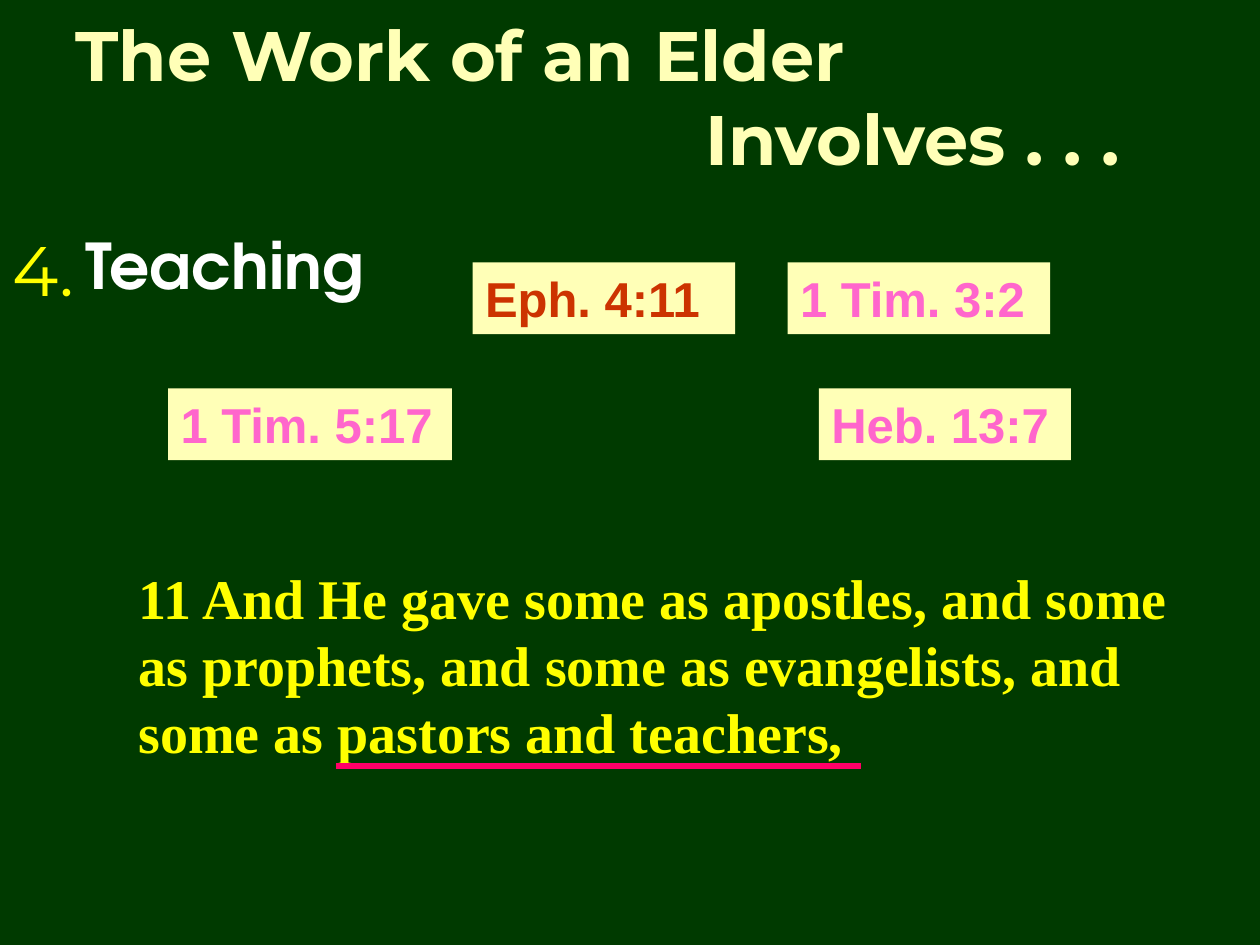
from dataclasses import dataclass

from lxml.etree import SubElement
from pptx import Presentation
from pptx.dml.color import RGBColor
from pptx.enum.shapes import MSO_CONNECTOR, MSO_SHAPE
from pptx.enum.text import MSO_ANCHOR, PP_ALIGN
from pptx.oxml.ns import qn
from pptx.util import Cm, Pt


@dataclass(frozen=True)
class TextStyle:
    font: str
    size: int
    color: str
    bold: bool = True


@dataclass(frozen=True)
class Theme:
    background: str = "003A00"
    label_fill: str = "FFFFB7"
    underline: str = "FF0066"
    underline_width: int = 3
    title: TextStyle = TextStyle("Montserrat", 40, "FFFFB7")
    number: TextStyle = TextStyle("Montserrat", 40, "FFFF00", False)
    topic: TextStyle = TextStyle("TeX Gyre Adventor", 36, "FFFFFF")
    current_reference: TextStyle = TextStyle("Arial", 28, "CC3300")
    other_reference: TextStyle = TextStyle("Arial", 28, "FF66CC")
    verse: TextStyle = TextStyle("Times New Roman", 32, "FFFF00")


@dataclass(frozen=True)
class Box:
    left: float
    top: float
    width: float
    height: float

    def lengths(self) -> tuple:
        return Cm(self.left), Cm(self.top), Cm(self.width), Cm(self.height)


@dataclass(frozen=True)
class Reference:
    text: str
    box: Box
    style: TextStyle


THEME = Theme()
LABEL_HEIGHT = 1.45
FIRST_ROW, SECOND_ROW = 5.29, 7.83
REFERENCES = (
    Reference("Eph. 4:11", Box(9.53, FIRST_ROW, 5.29, LABEL_HEIGHT), THEME.current_reference),
    Reference("1 Tim. 3:2", Box(15.88, FIRST_ROW, 5.29, LABEL_HEIGHT), THEME.other_reference),
    Reference("1 Tim. 5:17", Box(3.39, SECOND_ROW, 5.72, LABEL_HEIGHT), THEME.other_reference),
    Reference("Heb. 13:7", Box(16.51, SECOND_ROW, 5.08, LABEL_HEIGHT), THEME.other_reference),
)


def write_text(shape, lines: tuple[str, ...], style: TextStyle, anchor=MSO_ANCHOR.TOP) -> None:
    frame = shape.text_frame
    frame.word_wrap = True
    frame.vertical_anchor = anchor
    for index, line in enumerate(lines):
        paragraph = frame.add_paragraph() if index else frame.paragraphs[0]
        paragraph.alignment = PP_ALIGN.LEFT
        run = paragraph.add_run()
        run.text = line
        run.font.name = style.font
        run.font.size = Pt(style.size)
        run.font.bold = style.bold
        run.font.color.rgb = RGBColor.from_string(style.color)


def add_text(slide, box: Box, lines: tuple[str, ...], style: TextStyle, anchor=MSO_ANCHOR.TOP):
    shape = slide.shapes.add_textbox(*box.lengths())
    write_text(shape, lines, style, anchor)
    return shape


def add_reference(slide, reference: Reference) -> None:
    shape = slide.shapes.add_shape(MSO_SHAPE.RECTANGLE, *reference.box.lengths())
    shape.shadow.inherit = False
    shape.fill.solid()
    shape.fill.fore_color.rgb = RGBColor.from_string(THEME.label_fill)
    shape.line.fill.background()
    write_text(shape, (reference.text,), reference.style)


def add_underline(slide, left: float, right: float, top: float) -> None:
    line = slide.shapes.add_connector(
        MSO_CONNECTOR.STRAIGHT, Cm(left), Cm(top), Cm(right), Cm(top)
    )
    line.line.color.rgb = RGBColor.from_string(THEME.underline)
    line.line.width = Pt(THEME.underline_width)
    SubElement(line.element.spPr, qn("a:effectLst"))


def main() -> None:
    presentation = Presentation()
    presentation.slide_width, presentation.slide_height = Cm(25.4), Cm(19.05)
    slide = presentation.slides.add_slide(presentation.slide_layouts[6])
    slide.background.fill.solid()
    slide.background.fill.fore_color.rgb = RGBColor.from_string(THEME.background)

    # Title, with its second line set in from the left
    title = add_text(
        slide, Box(1.27, 0.69, 23.29, 2.49),
        ("The Work of an Elder", "Involves . . ."), THEME.title, MSO_ANCHOR.MIDDLE,
    )
    second_line = title.text_frame.paragraphs[1]
    second_line._p.get_or_add_pPr().set("marL", str(Cm(12.7)))

    # Numbered topic
    add_text(slide, Box(1.47, 4.45, 22.23, 2.34), ("Teaching",), THEME.topic)
    add_text(slide, Box(0, 4.45, 2.34, 1.96), ("4.",), THEME.number)

    # Scripture references
    for reference in REFERENCES:
        add_reference(slide, reference)

    # Quoted verse and the emphasis under its last words
    verse = (
        "11 And He gave some as apostles, and some as prophets, "
        "and some as evangelists, and some as pastors and teachers,"
    )
    add_text(slide, Box(2.54, 11.23, 21.39, 4.32), (verse,), THEME.verse)
    add_underline(slide, 6.78, 17.35, 15.44)

    presentation.save("out.pptx")


if __name__ == "__main__":
    main()
